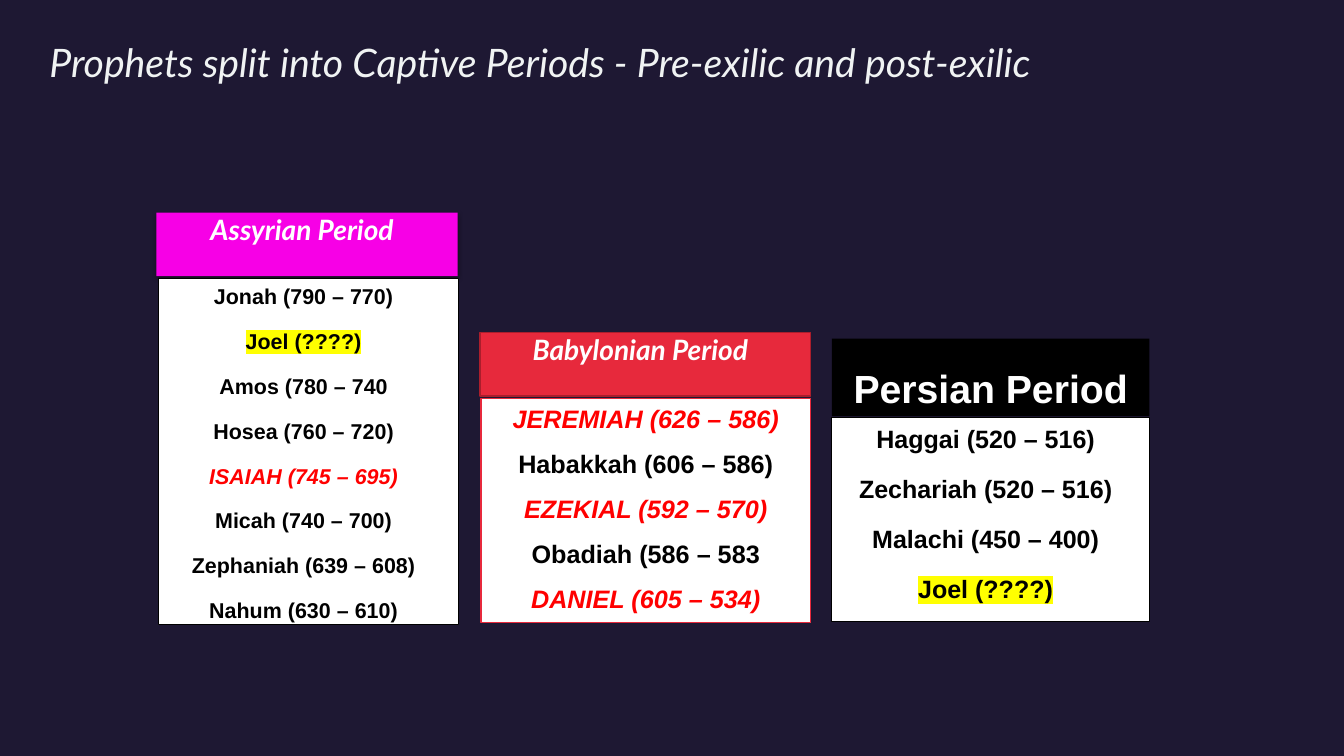
import pptx
import pptx.util
import pptx.dml.color
import pptx.enum.shapes
import pptx.enum.text
import pptx.oxml
import pptx.oxml.ns

Inches = pptx.util.Inches
Pt = pptx.util.Pt
RGBColor = pptx.dml.color.RGBColor
ANCHOR = pptx.enum.text.MSO_ANCHOR

NIGHT = RGBColor(0x1E, 0x18, 0x33)
PALE = RGBColor(0xF0, 0xF3, 0xF3)
WHITE = RGBColor(0xFF, 0xFF, 0xFF)
BLACK = RGBColor(0, 0, 0)
PINK = RGBColor(0xF7, 0x00, 0xE6)
ROSE = RGBColor(0xE7, 0x29, 0x3C)
WINE = RGBColor(0xAB, 0x1E, 0x2C)
RED = RGBColor(0xFF, 0, 0)

NS = pptx.oxml.ns.nsdecls("a")
MARK = f'<a:highlight {NS}><a:srgbClr val="FFFF00"/></a:highlight>'
SHADE = (
    f'<a:effectLst {NS}><a:outerShdw blurRad="44450" dist="13970" dir="5400000">'
    '<a:srgbClr val="000000"><a:alpha val="45000"/></a:srgbClr>'
    '</a:outerShdw></a:effectLst>'
)
SLIM = (0, 0, 0.1, 0)
WIDE = (0.1, 0.05, 0.1, 0.05)


def add_box(place, fill, edge, pad, anchor):
    box = slide.shapes.add_shape(
        pptx.enum.shapes.MSO_SHAPE.RECTANGLE, *map(Inches, place))
    box.shadow.inherit = False
    box.fill.solid()
    box.fill.fore_color.rgb = fill
    if edge is None:
        box.line.fill.background()
    else:
        box.line.color.rgb = edge
        box.line.width = Pt(0.85)
    frame = box.text_frame
    frame.word_wrap = True
    frame.vertical_anchor = anchor
    (frame.margin_left, frame.margin_top,
     frame.margin_right, frame.margin_bottom) = map(Inches, pad)
    return box


def style(para, face, size, color, bold, slant):
    para.font.name = face
    para.font.size = Pt(size)
    para.font.color.rgb = color
    para.font.bold = bold
    para.font.italic = slant


deck = pptx.Presentation()
deck.slide_width = Inches(13.33)
deck.slide_height = Inches(7.5)
slide = deck.slides.add_slide(deck.slide_layouts[6])
slide.background.fill.solid()
slide.background.fill.fore_color.rgb = NIGHT

title = slide.shapes.add_textbox(*map(Inches, (0.49, 0.43, 12.37, 1.25)))
frame = title.text_frame
frame.word_wrap = True
frame.margin_left = frame.margin_top = frame.margin_right = frame.margin_bottom = 0
para = frame.paragraphs[0]
para.text = "Prophets split into Captive Periods - Pre-exilic and post-exilic"
para.line_spacing = 0.9
style(para, "Lato", 28, PALE, False, True)

heads = [
    ("Assyrian Period", (1.55, 2.11, 2.99, 0.63), PINK, None, SLIM, ANCHOR.TOP, "Lato", 20, True),
    ("Babylonian Period", (4.76, 3.3, 3.28, 0.63), ROSE, WINE, SLIM, ANCHOR.TOP, "Lato", 20, True),
    ("Persian Period", (8.25, 3.36, 3.15, 0.77), BLACK, None, WIDE, ANCHOR.BOTTOM, "Arial", 28, False),
]
for text, place, fill, edge, pad, anchor, face, size, slant in heads:
    box = add_box(place, fill, edge, pad, anchor)
    if fill == PINK:
        props = box._element.spPr
        props.remove(props.find(pptx.oxml.ns.qn("a:effectLst")))
        props.append(pptx.oxml.parse_xml(SHADE))
    para = box.text_frame.paragraphs[0]
    para.text = text
    para.alignment = pptx.enum.text.PP_ALIGN.CENTER
    style(para, face, size, WHITE, True, slant)

lists = [
    ((1.57, 2.76, 2.98, 3.44), BLACK, SLIM, 15.3, 1.2, 10, 0, [
        "Jonah (790 – 770)", "Joel (????)", "Amos (780 – 740",
        "Hosea (760 – 720)", "ISAIAH (745 – 695)", "Micah (740 – 700)",
        "Zephaniah (639 – 608)", "Nahum (630 – 610)"]),
    ((4.77, 3.95, 3.27, 2.23), ROSE, WIDE, 18, 1.0, 4.5, 6, [
        "JEREMIAH (626 – 586)", "Habakkah (606 – 586)",
        "EZEKIAL (592 – 570)", "Obadiah (586 – 583",
        "DANIEL (605 – 534)"]),
    ((8.25, 4.14, 3.15, 2.03), BLACK, SLIM, 17.9, 1.2, 10, 0, [
        "Haggai (520 – 516)", "Zechariah (520 – 516)",
        "Malachi (450 – 400)", "Joel (????)"]),
]
for place, edge, pad, size, pitch, above, below, names in lists:
    frame = add_box(place, WHITE, edge, pad, ANCHOR.TOP).text_frame
    for rank, name in enumerate(names):
        para = frame.add_paragraph() if rank else frame.paragraphs[0]
        run = para.add_run()
        run.text = name
        para.alignment = pptx.enum.text.PP_ALIGN.CENTER
        para.line_spacing = pitch
        para.space_before = Pt(above if rank else 0)
        para.space_after = Pt(below)
        major = name.split()[0].isupper()
        style(para, "Arial", size, RED if major else BLACK, True, major)
        if "?" in name:
            run._r.get_or_add_rPr().append(pptx.oxml.parse_xml(MARK))

deck.save("out.pptx")
